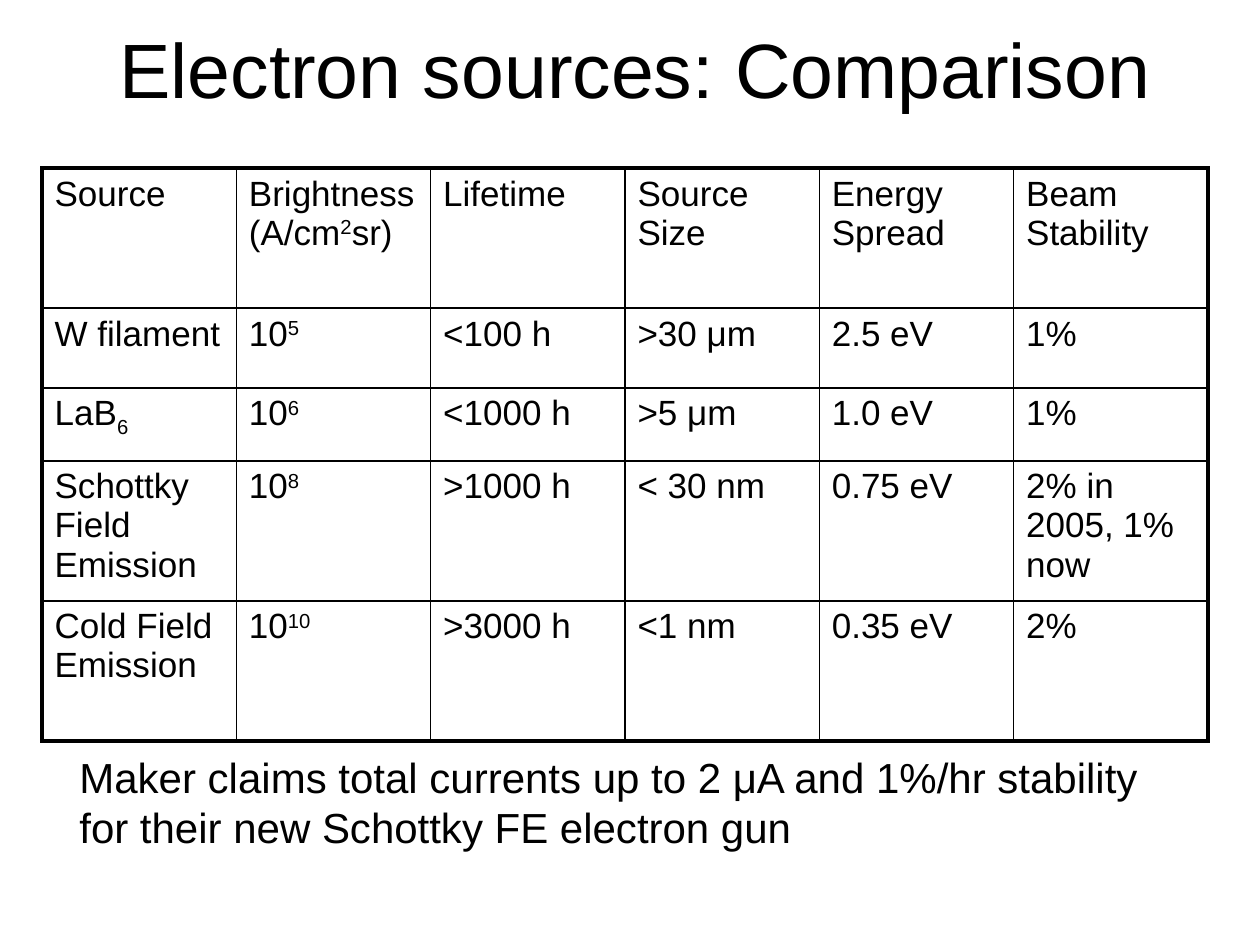
import pptx
import pptx.util
import pptx.dml.color
import pptx.enum.text
import pptx.oxml

PX = 914400 // 126


def color(value):
    return pptx.dml.color.RGBColor.from_string(value)


def style(r, size):
    r.font.name = "Arial"
    r.font.size = pptx.util.Pt(size)
    r.font.color.rgb = color("000000")


prs = pptx.Presentation()
prs.slide_width = pptx.util.Inches(10)
prs.slide_height = pptx.util.Inches(7.5)
s = prs.slides.add_slide(prs.slide_layouts[5])
s.background.fill.solid()
s.background.fill.fore_color.rgb = color("FFFFFF")

title = s.shapes.title
title.left, title.top, title.width, title.height = 42 * PX, 31 * PX, 1187 * PX, 73 * PX
tf = title.text_frame
tf.text = "Electron sources: Comparison"
tf.auto_size = pptx.enum.text.MSO_AUTO_SIZE.NONE
tf.vertical_anchor = pptx.enum.text.MSO_ANCHOR.MIDDLE
p = tf.paragraphs[0]
p.alignment = pptx.enum.text.PP_ALIGN.CENTER
style(p.runs[0], 44)

rows = [
    ["Source", "Brightness (A/cm^2^sr)", "Lifetime", "Source Size", "Energy Spread", "Beam Stability"],
    ["W filament", "10^5", "<100 h", ">30 μm", "2.5 eV", "1%"],
    ["LaB_6", "10^6", "<1000 h", ">5 μm", "1.0 eV", "1%"],
    ["Schottky Field Emission", "10^8", ">1000 h", "< 30 nm", "0.75 eV", "2% in 2005, 1% now"],
    ["Cold Field Emission", "10^10", ">3000 h", "<1 nm", "0.35 eV", "2%"],
]
heights = [140, 80, 73, 140, 140]
last_row, last_col = len(rows) - 1, len(rows[0]) - 1
table = s.shapes.add_table(
    len(rows), len(rows[0]), 42 * PX, 168 * PX, 1166 * PX, sum(heights) * PX
).table
table.first_row = False
table.horz_banding = False

for i, row in enumerate(rows):
    table.rows[i].height = heights[i] * PX
    for j, text in enumerate(row):
        cell = table.cell(i, j)
        cell.fill.background()
        p = cell.text_frame.paragraphs[0]
        mark, baseline = ("_", -25000) if "_" in text else ("^", 30000)
        for k, part in enumerate(text.split(mark)):
            r = p.add_run()
            r.text = part
            style(r, 20)
            if k % 2:
                r.font._element.set("baseline", str(baseline))
        tcPr = cell._tc.get_or_add_tcPr()
        outer = {"L": j == 0, "R": j == last_col, "T": i == 0, "B": i == last_row}
        for k, (side, thick) in enumerate(outer.items()):
            width = pptx.util.Pt(2.25 if thick else 1)
            tcPr.insert(k, pptx.oxml.parse_xml(
                f'<a:ln{side} xmlns:a="http://schemas.openxmlformats.org/drawingml/2006/main" w="{width}">'
                f'<a:solidFill><a:srgbClr val="000000"/></a:solidFill></a:ln{side}>'
            ))

note = s.shapes.add_textbox(67 * PX, 745 * PX, 1109 * PX, 115 * PX)
tf = note.text_frame
tf.word_wrap = True
tf.auto_size = pptx.enum.text.MSO_AUTO_SIZE.SHAPE_TO_FIT_TEXT
tf.text = "Maker claims total currents up to 2 μA and 1%/hr stability for their new Schottky FE electron gun"
style(tf.paragraphs[0].runs[0], 24)

prs.save("out.pptx")
